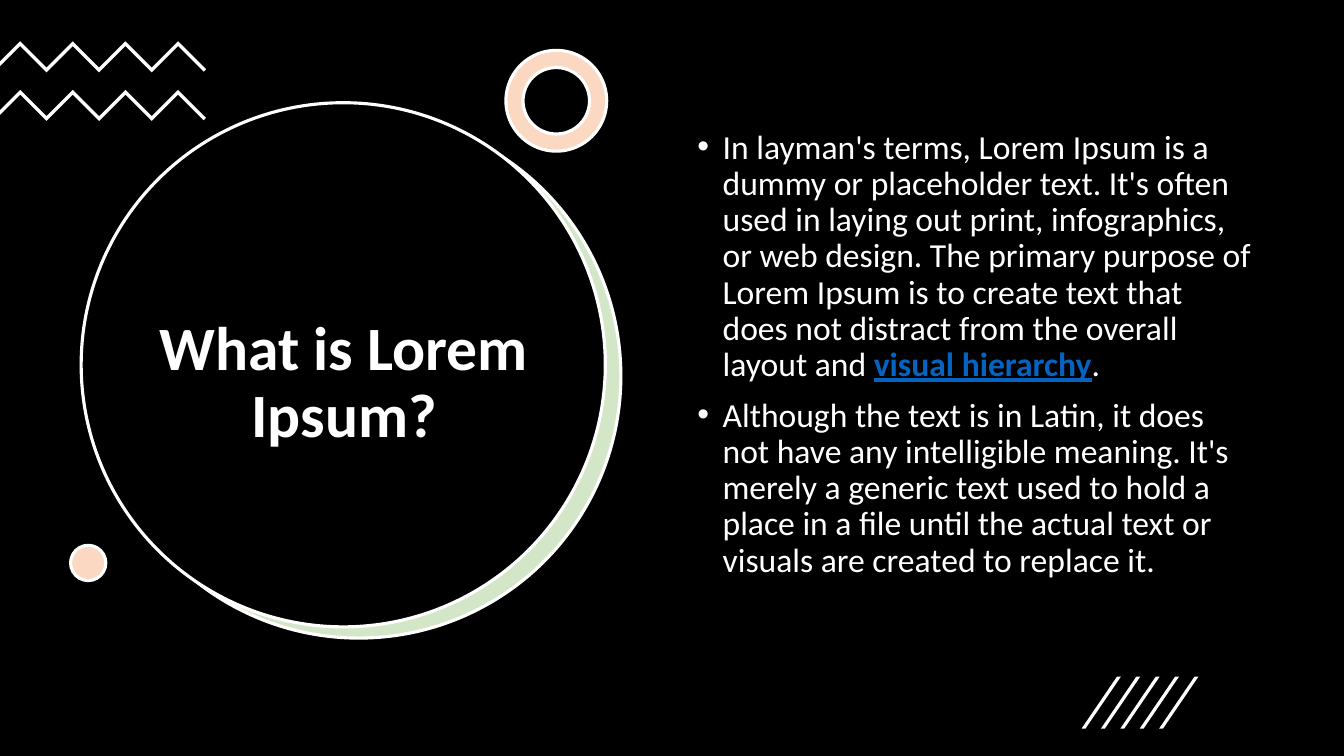
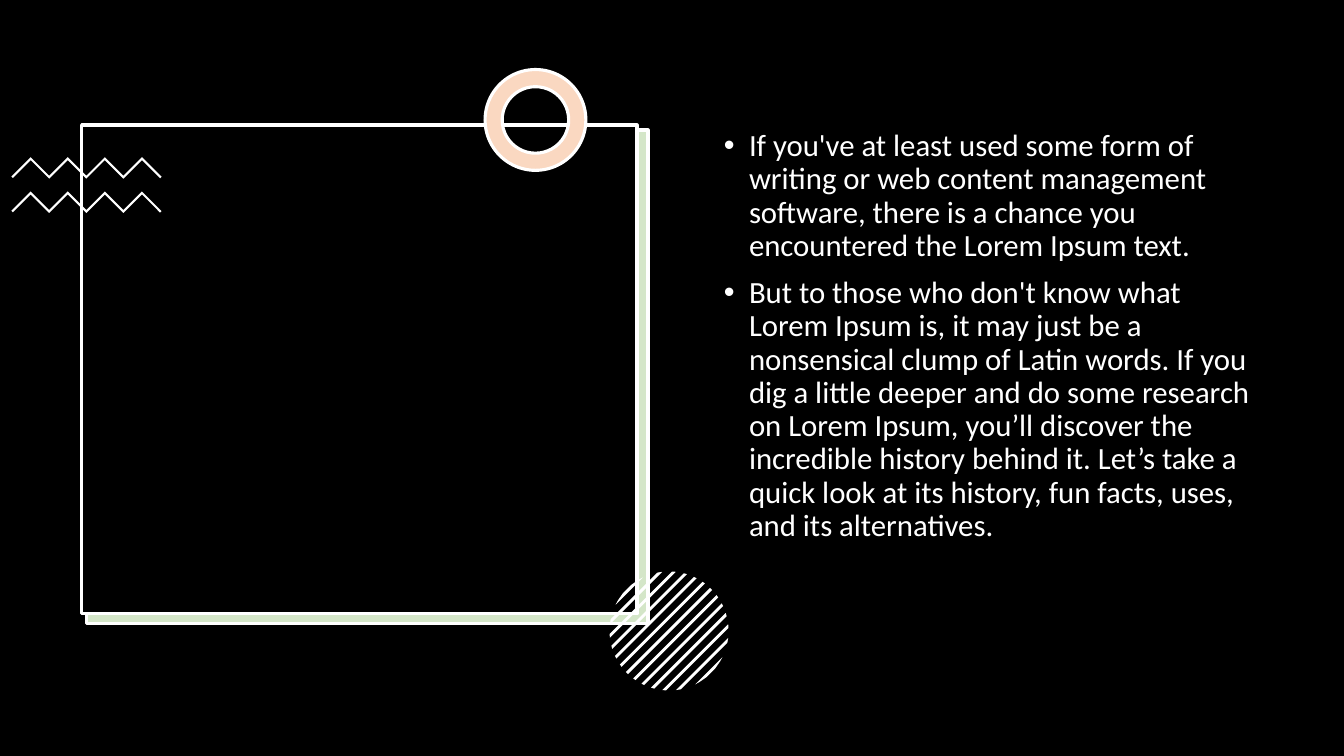
import math

import pptx
import pptx.dml.color
import pptx.enum.shapes
import pptx.enum.text
import pptx.util

Pt = pptx.util.Pt
PRESET = pptx.enum.shapes.MSO_SHAPE
ANCHOR = pptx.enum.text.MSO_ANCHOR
ALIGN = pptx.enum.text.PP_ALIGN

BLACK, WHITE, GREEN, PEACH, BLUE = "000000", "FFFFFF", "D4E6C8", "FAD8C1", "0563C1"
FONT = "Calibri"
OUTLINE = 2.25
RING_SIZE = 72

# A paragraph is a list of (text, is_keyword) runs; boxes are left, top, width, height.
SLIDES = [
    {
        "title": "What is Lorem Ipsum?",
        "title_box": (87.1, 147.6, 317.5, 253.4),
        "body_box": (491, 89.3, 411.1, 342.7),
        "body_size": 24,
        "body": [
            [("In layman's terms, Lorem Ipsum is a dummy or placeholder text. It's often used in "
              "laying out print, infographics, or web design. The primary purpose of Lorem Ipsum "
              "is to create text that does not distract from the overall layout and ", False),
             ("visual hierarchy", True), (".", False)],
            [("Although the text is in Latin, it does not have any intelligible meaning. It's "
              "merely a generic text used to hold a place in a file until the actual text or "
              "visuals are created to replace it.", False)],
        ],
        "panel": PRESET.OVAL,
        "panel_boxes": [(69.1, 81.4, 374.4, 374.4), (58, 73.4, 374.4, 374.4)],
        "zigzag": {"peak": (14.4, 29.5), "half": 18.8, "thick": 3.4,
                   "start_run": 14.4, "end_run": 20, "start_inset": 0},
        "zigzag_gap": 34.7,
        "ring": (361.4, 36),
    },
    {
        "title": None,
        "body_box": (509.8, 89.3, 391.7, 342.7),
        "body_size": 22,
        "body": [
            [("If you've at least used some form of writing or web content management software, "
              "there is a chance you encountered the Lorem Ipsum text.", False)],
            [("But to those who don't know what Lorem Ipsum is, it may just be a nonsensical "
              "clump of Latin words. If you dig a little deeper and do some research on Lorem "
              "Ipsum, you’ll discover the incredible history behind it. Let’s take a quick look "
              "at its history, fun facts, uses, and its alternatives.", False)],
        ],
        "panel": PRESET.RECTANGLE,
        "panel_boxes": [(61.9, 92.9, 401, 352.8), (58.3, 89.3, 396.7, 349.2)],
        "zigzag": {"peak": (21.9, 112.3), "half": 13.25, "thick": 2.1,
                   "start_run": 13.8, "end_run": 14, "start_inset": 1.05},
        "zigzag_gap": 24.5,
        "ring": (346.5, 49.7),
    },
]
DOT = (50.4, 389.5, 25.2, 25.2)
SLASH = {"box": (772.6, 483.4, 28, 37), "step": 13.85, "count": 5, "skew": 0.9}
STRIPED_CIRCLE = {"center": (477.9, 450.7), "radius": 42.5, "step": 9.72, "thick": 2.9, "count": 13}


def rgb(color):
    return pptx.dml.color.RGBColor.from_string(color)


def set_all(target, values):
    for name, value in values.items():
        setattr(target, name, value)


def paint(shape, fill, line=None):
    shape.shadow.inherit = False
    shape.fill.solid()
    shape.fill.fore_color.rgb = rgb(fill)
    if line:
        shape.line.color.rgb = rgb(line)
        shape.line.width = Pt(OUTLINE)
    else:
        shape.line.fill.background()


def add_preset(slide, preset, box, fill, line=None, adjustment=None):
    shape = slide.shapes.add_shape(preset, *map(Pt, box))
    if adjustment is not None:
        shape.adjustments[0] = adjustment
    paint(shape, fill, line)


def add_polygon(slide, points):
    points = [(Pt(x), Pt(y)) for x, y in points]
    builder = slide.shapes.build_freeform(*points[0], scale=1.0)
    builder.add_line_segments(points[1:], close=True)
    paint(builder.convert_to_shape(), WHITE)


def add_zigzag(slide, peak, half, thick, start_run, end_run, start_inset, drop):
    """Draw a 45-degree band with four peaks."""
    left, top = peak[0], peak[1] + drop
    corners = [(left + i * half, top + (i % 2) * half) for i in range(7)]
    start = (left - start_run, top + start_run)
    end = (corners[-1][0] + end_run, top + end_run)
    lower = [(x, y + thick) for x, y in reversed(corners)]
    lower_end = (end[0] - thick / 2, end[1] + thick / 2)
    lower_start = (start[0] + start_inset, start[1] + thick - start_inset)
    add_polygon(slide, [start, *corners, end, lower_end, *lower, lower_start])


def add_striped_circle(slide, center, radius, step, thick, count):
    """Draw diagonal bands cut off by a circle; offsets are measured along x + y."""
    for i in range(count):
        middle = (i - (count - 1) / 2) * step
        upper, lower = [], []
        for offset in (middle - thick / 2, middle, middle + thick / 2):
            reach = math.sqrt(max(0, radius ** 2 - offset ** 2 / 2) / 2)
            x, y = center[0] + offset / 2, center[1] + offset / 2
            upper.append((x + reach, y - reach))
            lower.append((x - reach, y + reach))
        add_polygon(slide, upper + lower[::-1])


def place_text(placeholder, box, anchor):
    """Move a placeholder, bring it to the front and return its text frame."""
    set_all(placeholder, dict(zip(("left", "top", "width", "height"), map(Pt, box))))
    placeholder.element.getparent().append(placeholder.element)
    frame = placeholder.text_frame
    set_all(frame, {"word_wrap": True, "vertical_anchor": anchor,
                    "auto_size": pptx.enum.text.MSO_AUTO_SIZE.NONE})
    return frame


def add_run(paragraph, text, size, color=WHITE, bold=False, underline=False):
    run = paragraph.add_run()
    run.text = text
    set_all(run.font, {"name": FONT, "size": Pt(size), "bold": bold, "underline": underline})
    run.font.color.rgb = rgb(color)


def fill_title(slide, content):
    title = slide.shapes.title
    if not content["title"]:
        title.element.getparent().remove(title.element)
        return
    paragraph = place_text(title, content["title_box"], ANCHOR.MIDDLE).paragraphs[0]
    set_all(paragraph, {"alignment": ALIGN.CENTER, "line_spacing": 0.9})
    add_run(paragraph, content["title"], 44, bold=True)


def fill_body(slide, content):
    frame = place_text(slide.placeholders[1], content["body_box"], ANCHOR.TOP)
    for i, runs in enumerate(content["body"]):
        paragraph = frame.add_paragraph() if i else frame.paragraphs[0]
        set_all(paragraph, {"line_spacing": 0.9, "space_before": Pt(10)})
        properties = paragraph._p.get_or_add_pPr()
        properties.set("marL", str(Pt(18)))
        properties.set("indent", str(-Pt(18)))
        for text, is_keyword in runs:
            style = {"color": BLUE, "bold": True, "underline": True} if is_keyword else {}
            add_run(paragraph, text, content["body_size"], **style)


def build_slide(presentation, content):
    slide = presentation.slides.add_slide(presentation.slide_layouts[1])
    for box, fill in zip(content["panel_boxes"], (GREEN, BLACK)):
        add_preset(slide, content["panel"], box, fill, WHITE)
    for drop in (0, content["zigzag_gap"]):
        add_zigzag(slide, **content["zigzag"], drop=drop)
    ring_box = (*content["ring"], RING_SIZE, RING_SIZE)
    add_preset(slide, PRESET.DONUT, ring_box, PEACH, WHITE, 0.17)
    fill_title(slide, content)
    fill_body(slide, content)
    return slide


def main():
    presentation = pptx.Presentation()
    set_all(presentation, {"slide_width": Pt(960), "slide_height": Pt(540)})
    background = presentation.slide_master.background.fill
    background.solid()
    background.fore_color.rgb = rgb(BLACK)

    definition, encounter = [build_slide(presentation, content) for content in SLIDES]
    add_preset(definition, PRESET.OVAL, DOT, PEACH, WHITE)
    left, *rest = SLASH["box"]
    for i in range(SLASH["count"]):
        box = (left + i * SLASH["step"], *rest)
        add_preset(definition, PRESET.PARALLELOGRAM, box, WHITE, adjustment=SLASH["skew"])
    add_striped_circle(encounter, **STRIPED_CIRCLE)

    presentation.save("out.pptx")


if __name__ == "__main__":
    main()
